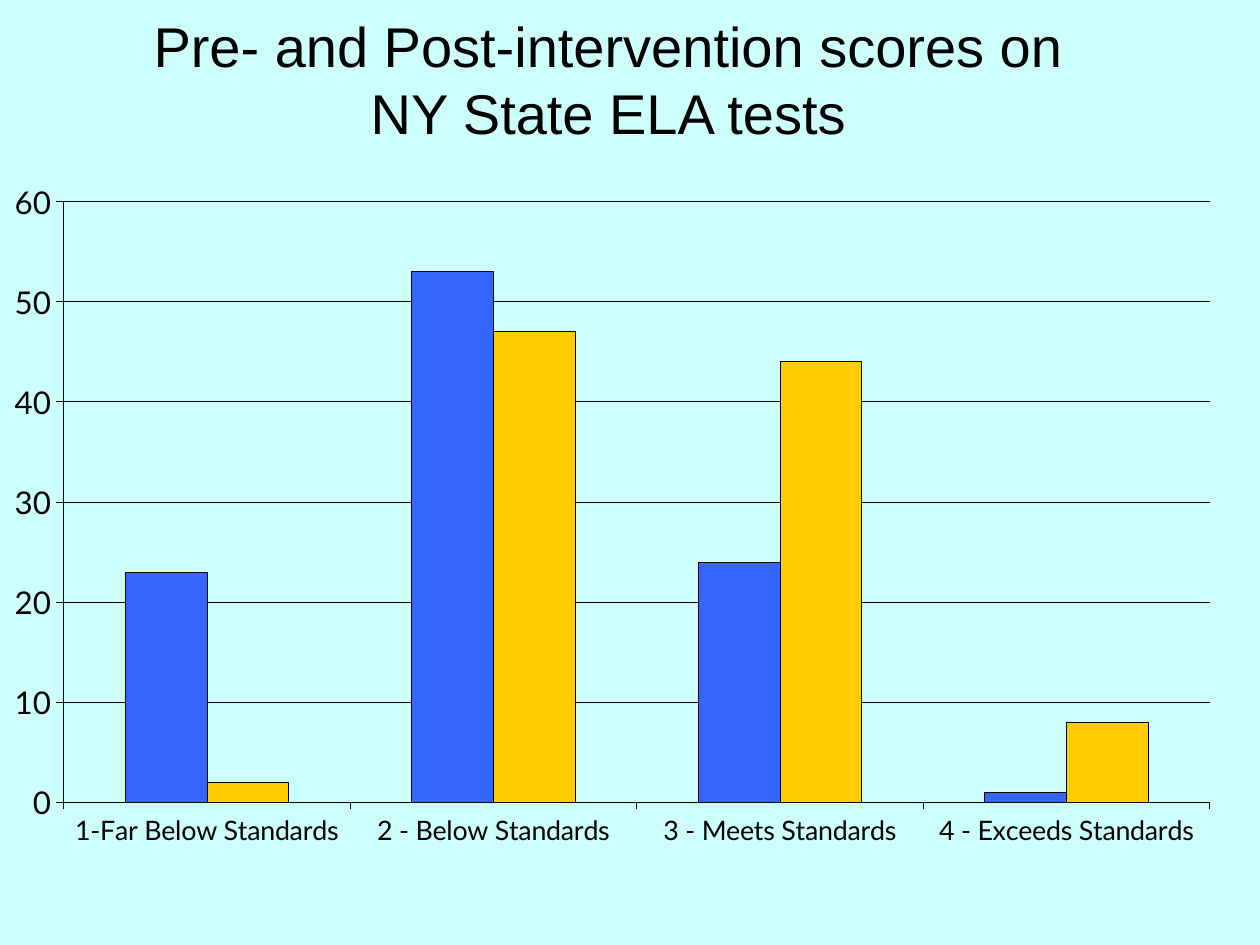
from lxml import etree
from pptx import Presentation
from pptx.chart.data import CategoryChartData
from pptx.dml.color import RGBColor
from pptx.enum.chart import XL_CHART_TYPE, XL_TICK_LABEL_POSITION, XL_TICK_MARK
from pptx.enum.text import MSO_ANCHOR, PP_ALIGN
from pptx.oxml.ns import qn
from pptx.util import Inches, Pt

CLUSTERED = XL_CHART_TYPE.COLUMN_CLUSTERED
LABELS_LOW = XL_TICK_LABEL_POSITION.LOW
TICK_OUT, TICK_NONE = XL_TICK_MARK.OUTSIDE, XL_TICK_MARK.NONE
MIDDLE, CENTER = MSO_ANCHOR.MIDDLE, PP_ALIGN.CENTER

BLACK = RGBColor(0x00, 0x00, 0x00)
PALE_CYAN = RGBColor(0xCD, 0xFF, 0xFC)
BLUE = RGBColor(0x33, 0x66, 0xFF)
GOLD = RGBColor(0xFF, 0xCC, 0x00)

LEVELS = ["1-Far Below Standards", "2 - Below Standards",
          "3 - Meets Standards", "4 - Exceeds Standards"]
SCORES = [("Series 1", [23, 53, 24, 1], BLUE),
          ("Series 2", [2, 47, 44, 8], GOLD)]
PLOT_AREA = {"x": 0.068, "y": 0.04, "w": 0.917, "h": 0.793}


def format_font(font, name, size):
    """Set the typeface, size and black colour of a font."""
    font.name = name
    font.size = Pt(size)
    font.color.rgb = BLACK


def format_line(line, width):
    """Make a line solid black with the given width."""
    line.color.rgb = BLACK
    line.width = Pt(width)


def add_title(page, text, *, left, top, width, height, font, size):
    """Add a centred title; a vertical tab in the text breaks the line."""
    box = page.shapes.add_textbox(Inches(left), Inches(top), Inches(width), Inches(height))
    frame = box.text_frame
    frame.word_wrap = True
    frame.vertical_anchor = MIDDLE
    para = frame.paragraphs[0]
    para.text = text
    para.alignment = CENTER
    for span in para.runs:
        format_font(span.font, font, size)


def format_axis(axis, size):
    """Style the ticks, labels and line of an axis."""
    axis.major_tick_mark = TICK_OUT
    axis.minor_tick_mark = TICK_NONE
    format_font(axis.tick_labels.font, "Lato", size)
    format_line(axis.format.line, 0.32)


def place_plot(chart, area):
    """Fix the inner plot area as fractions of the chart."""
    plot_area = chart.plots[0]._element.getparent()
    layout = plot_area.find(qn("c:layout"))
    if layout is None:
        layout = etree.Element(qn("c:layout"))
        plot_area.insert(0, layout)
    manual = etree.SubElement(layout, qn("c:manualLayout"))
    settings = {"layoutTarget": "inner", "xMode": "edge", "yMode": "edge", **area}
    for tag, value in settings.items():
        etree.SubElement(manual, qn(f"c:{tag}")).set("val", str(value))


def add_score_chart(page, *, left, top, width, height):
    """Add the clustered columns of scores before and after intervention."""
    data = CategoryChartData()
    data.categories = LEVELS
    for name, values, _ in SCORES:
        data.add_series(name, values)
    chart = page.shapes.add_chart(CLUSTERED, Inches(left), Inches(top),
                                  Inches(width), Inches(height), data).chart
    chart.has_legend = False
    chart.has_title = False
    format_font(chart.font, "Lato", 26.5)

    format_axis(chart.category_axis, 15.3)
    chart.category_axis.tick_label_position = LABELS_LOW
    scale = chart.value_axis
    format_axis(scale, 17.9)
    scale.minimum_scale, scale.maximum_scale, scale.major_unit = 0, 60, 10
    scale.has_major_gridlines = True
    format_line(scale.major_gridlines.format.line, 0.32)

    plot = chart.plots[0]
    plot.gap_width = 150
    plot.overlap = 0
    plot.vary_by_categories = False
    for series, (_, _, color) in zip(plot.series, SCORES):
        series.format.fill.solid()
        series.format.fill.fore_color.rgb = color
        format_line(series.format.line, 0.25)
    place_plot(chart, PLOT_AREA)


def main():
    """Build and save the slide."""
    deck = Presentation()
    deck.slide_width, deck.slide_height = Inches(10), Inches(7.5)
    page = deck.slides.add_slide(deck.slide_layouts[6])
    page.background.fill.solid()
    page.background.fill.fore_color.rgb = PALE_CYAN
    add_title(page, "Pre- and Post-intervention scores on\vNY State ELA tests",
              left=0.58, top=0, width=8.5, height=1.25, font="Arial", size=32)
    add_score_chart(page, left=-0.17, top=1.36, width=9.92, height=6.01)
    deck.save("out.pptx")


if __name__ == "__main__":
    main()
